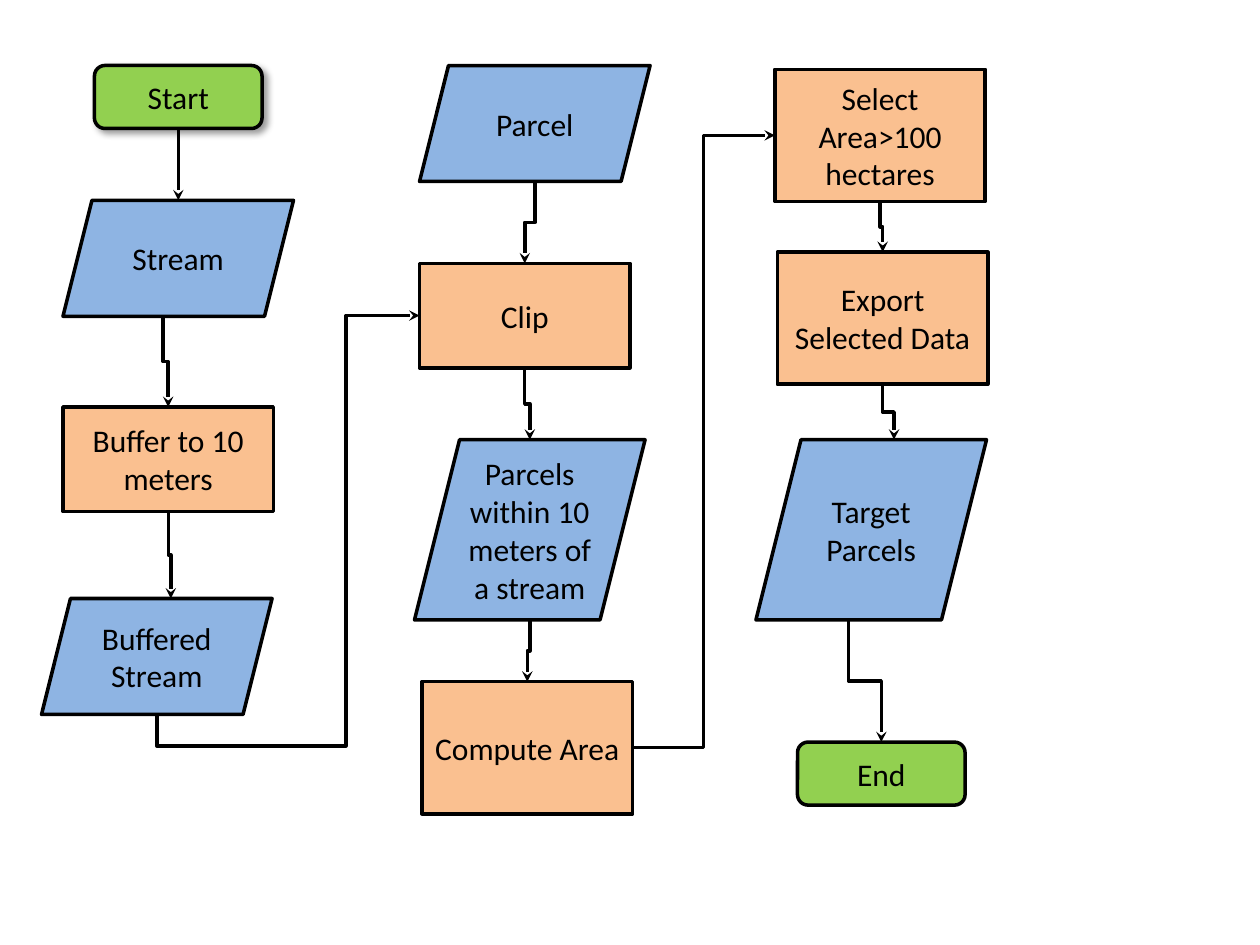
from pptx import Presentation
from pptx.dml.color import RGBColor
from pptx.enum.shapes import MSO_CONNECTOR, MSO_SHAPE
from pptx.enum.text import MSO_ANCHOR, PP_ALIGN
from pptx.oxml.ns import qn
from pptx.util import Inches, Pt
from lxml import etree

BLACK = RGBColor(0x00, 0x00, 0x00)
GREEN = RGBColor(0x92, 0xD0, 0x50)
BLUE = RGBColor(0x8E, 0xB4, 0xE3)
ORANGE = RGBColor(0xFA, 0xC0, 0x90)
RECT = MSO_SHAPE.RECTANGLE
ROUND = MSO_SHAPE.ROUNDED_RECTANGLE
PARALLELOGRAM = MSO_SHAPE.PARALLELOGRAM
STRAIGHT = MSO_CONNECTOR.STRAIGHT
ELBOW = MSO_CONNECTOR.ELBOW
CENTER = PP_ALIGN.CENTER
MIDDLE = MSO_ANCHOR.MIDDLE
TOP, LEFT, BOTTOM, RIGHT = range(4)


class Flowchart:
    """Holds the slide and the flowchart style."""

    font, size, weight = "Calibri", Pt(18), Pt(2)

    def __init__(self, slide):
        self.shapes = slide.shapes

    def node(self, kind, fill, text, x, y, w, h):
        sp = self.shapes.add_shape(kind, Inches(x), Inches(y), Inches(w), Inches(h))
        sp.shadow.inherit = False
        sp.fill.solid()
        sp.fill.fore_color.rgb = fill
        sp.line.color.rgb = BLACK
        sp.line.width = self.weight
        tf = sp.text_frame
        tf.word_wrap = True
        tf.vertical_anchor = MIDDLE
        p = tf.paragraphs[0]
        p.text = text
        p.alignment = CENTER
        p.font.name, p.font.size = self.font, self.size
        p.font.color.rgb = BLACK
        return sp

    def terminal(self, text, x, y):
        return self.node(ROUND, GREEN, text, x, y, 1.33, 0.5)

    def data(self, text, x, y, h=0.92):
        return self.node(PARALLELOGRAM, BLUE, text, x, y, 1.83, h)

    def process(self, text, x, y, h=1.05):
        return self.node(RECT, ORANGE, text, x, y, 1.67, h)

    def cast_shadow(self, sp):
        effects = sp._element.spPr.find(qn("a:effectLst"))
        shadow = etree.SubElement(effects, qn("a:outerShdw"), blurRad=str(Pt(4)),
                                  dist=str(Pt(3)), dir="2700000", algn="tl")
        color = etree.SubElement(shadow, qn("a:srgbClr"), val="000000")
        etree.SubElement(color, qn("a:alpha"), val="40000")

    def arrow(self, kind, x1, y1, x2, y2):
        cxn = self.shapes.add_connector(kind, int(x1), int(y1), int(x2), int(y2))
        cxn.line.color.rgb = BLACK
        cxn.line.width = self.weight
        etree.SubElement(cxn.line._get_or_add_ln(), qn("a:tailEnd"), type="stealth")
        etree.SubElement(cxn._element.spPr, qn("a:effectLst"))
        return cxn

    def vertical_elbow(self, x1, y1, x2, y2):
        """Elbow that leaves vertically: a horizontal elbow, turned about its middle."""
        cx, cy, dx, dy = (x1 + x2) / 2, (y1 + y2) / 2, x2 - x1, y2 - y1
        turn = -1 if dx > 0 and dy > 0 else 1
        lx, ly = turn * dy / 2, -turn * dx / 2
        cxn = self.arrow(ELBOW, cx - lx, cy - ly, cx + lx, cy + ly)
        cxn._element.spPr.find(qn("a:xfrm")).set("rot", str(turn * 90 % 360 * 60000))
        return cxn

    def down(self, a, b, from_shift=0, to_shift=0):
        """Arrow from the bottom of a to the top of b, shifted from their middles."""
        return self.vertical_elbow(a.left + a.width / 2 + Inches(from_shift), a.top + a.height,
                                   b.left + b.width / 2 + Inches(to_shift), b.top)

    def across(self, a, b):
        cxn = self.arrow(ELBOW, 0, 0, 0, 0)
        cxn.begin_connect(a, RIGHT)
        cxn.end_connect(b, LEFT)

    def under_and_up(self, a, b, drop, turn):
        """Arrow from the bottom of a, under it, and up to the left side of b."""
        cxn = self.vertical_elbow(a.left + a.width / 2, a.top + a.height,
                                  b.left, b.top + b.height / 2)
        geom = cxn._element.spPr.find(qn("a:prstGeom"))
        geom.set("prst", "bentConnector4")
        guides = geom.find(qn("a:avLst"))
        if guides is None:
            guides = etree.SubElement(geom, qn("a:avLst"))
        for name, value in (("adj1", drop), ("adj2", turn)):
            etree.SubElement(guides, qn("a:gd"), name=name, fmla=f"val {value}")


def main():
    prs = Presentation()
    prs.slide_width, prs.slide_height = Inches(10), Inches(7.5)
    chart = Flowchart(prs.slides.add_slide(prs.slide_layouts[6]))

    # Left column: buffer the stream
    start = chart.terminal("Start", 0.75, 0.52)
    chart.cast_shadow(start)
    stream = chart.data("Stream", 0.5, 1.59)
    buffer = chart.process("Buffer to 10 meters", 0.5, 3.23, 0.83)
    buffered = chart.data("Buffered Stream", 0.33, 4.75)

    # Middle column: clip the parcels
    parcel = chart.data("Parcel", 3.33, 0.52)
    clip = chart.process("Clip", 3.33, 2.09, 0.83)
    nearby = chart.data("Parcels within 10 meters of a stream", 3.29, 3.49, 1.43)
    compute = chart.process("Compute Area", 3.35, 5.41)

    # Right column: select and export
    select = chart.process("Select Area>100 hectares", 6.15, 0.55)
    export = chart.process("Export Selected Data", 6.17, 2)
    target = chart.data("Target Parcels", 6, 3.49, 1.43)
    end = chart.terminal("End", 6.33, 5.89)

    # Arrows within the columns; shifts reach the middles of slanted edges
    middle = start.left + start.width / 2
    first = chart.arrow(STRAIGHT, middle, start.top + start.height, middle, stream.top)
    first.begin_connect(start, BOTTOM)
    chart.down(stream, buffer, from_shift=-0.12)
    chart.down(buffer, buffered, to_shift=0.11)
    chart.down(parcel, clip)
    chart.down(clip, nearby)
    chart.down(nearby, compute)
    chart.down(select, export)
    chart.down(export, target, to_shift=0.18)
    chart.down(target, end, from_shift=-0.18)

    # Arrows between the columns
    chart.under_and_up(buffered, clip, drop=-7900, turn=72000)
    chart.across(compute, select)

    prs.save("out.pptx")


if __name__ == "__main__":
    main()
